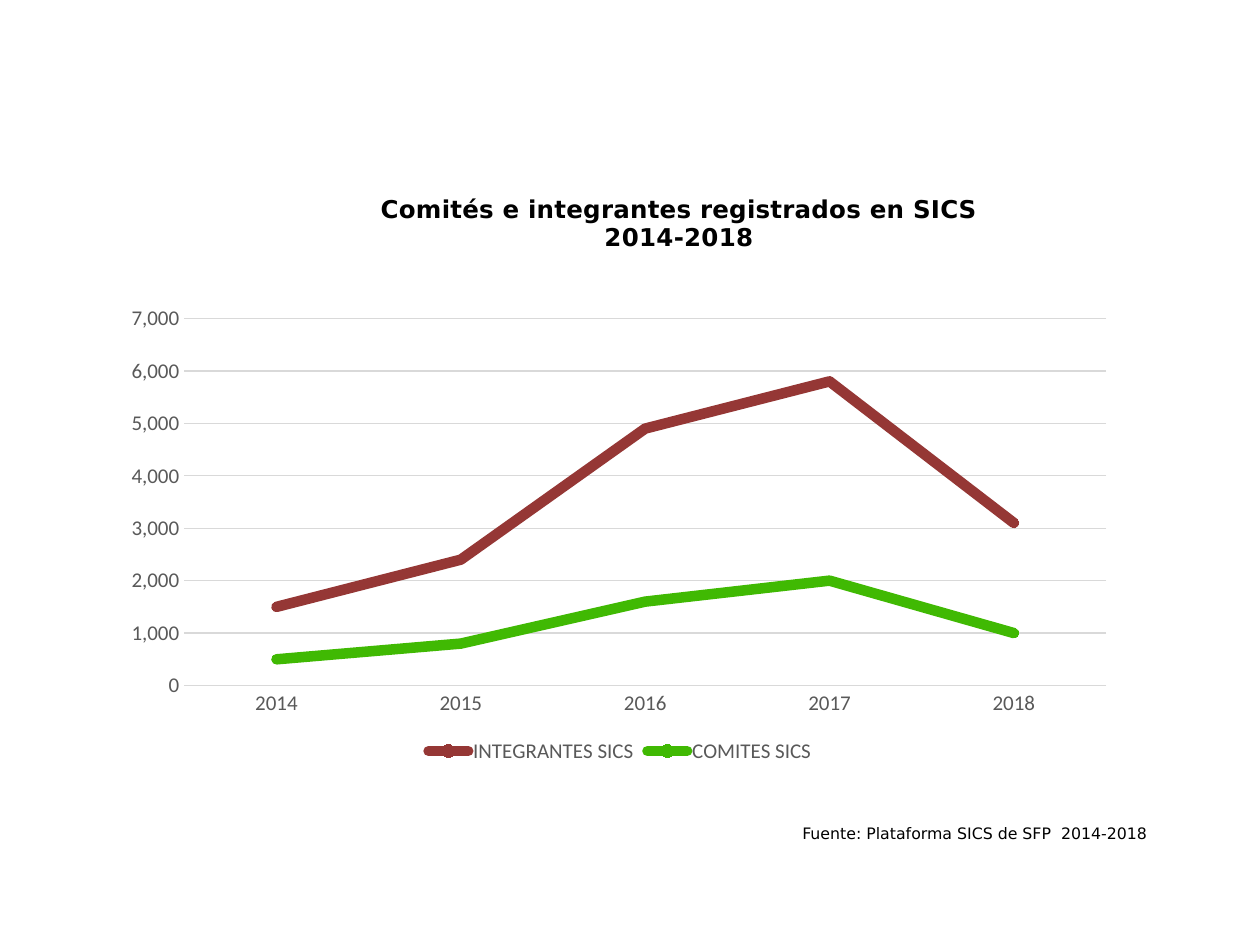
from dataclasses import dataclass

from lxml.etree import SubElement
from pptx import Presentation
from pptx.chart.data import CategoryChartData
from pptx.dml.color import RGBColor as RGB
from pptx.enum.chart import XL_CHART_TYPE as ChartType
from pptx.enum.chart import XL_LEGEND_POSITION as LegendPosition
from pptx.enum.chart import XL_MARKER_STYLE as MarkerStyle
from pptx.enum.chart import XL_TICK_MARK as TickMark
from pptx.enum.text import MSO_AUTO_SIZE as AutoSize
from pptx.enum.text import PP_ALIGN as Align
from pptx.oxml.ns import qn
from pptx.util import Pt


@dataclass(frozen=True)
class Theme:
    text: RGB = RGB(0x00, 0x00, 0x00)
    label: RGB = RGB(0x59, 0x59, 0x59)
    grid: RGB = RGB(0xD9, 0xD9, 0xD9)
    members: RGB = RGB(0x95, 0x37, 0x35)
    committees: RGB = RGB(0x40, 0xB9, 0x03)
    chart_font: str = "Calibri"
    text_font: str = "DejaVu Sans"
    title_size: int = 14
    label_size: int = 12
    source_size: int = 9


THEME = Theme()
YEARS = ["2014", "2015", "2016", "2017", "2018"]
REGISTERED = [
    ("INTEGRANTES SICS", [1500, 2400, 4900, 5800, 3100], THEME.members),
    ("COMITES SICS", [500, 800, 1600, 2000, 1000], THEME.committees),
]
TITLE_LINES = ["Comités e integrantes registrados en SICS", "2014-2018"]
SOURCE = "Fuente: Plataforma SICS de SFP  2014-2018"


def style_font(font, face, size, color, bold=False):
    font.name = face
    font.size = Pt(size)
    font.bold = bold
    font.color.rgb = color


def style_label(font):
    style_font(font, THEME.chart_font, THEME.label_size, THEME.label)


def style_rule(line):
    line.color.rgb = THEME.grid
    line.width = Pt(0.75)


def place(element, **settings):
    layout = element.find(qn("c:layout"))
    if layout is None:
        layout = element.makeelement(qn("c:layout"))
        text = element.find(qn("c:tx"))
        element.insert(0 if text is None else 1, layout)
    manual = SubElement(layout, qn("c:manualLayout"))
    for tag, value in settings.items():
        SubElement(manual, qn(f"c:{tag}")).set("val", str(value))


def add_title(chart):
    chart.has_title = True
    title = chart.chart_title
    title.include_in_layout = False
    frame = title.text_frame
    for index, line in enumerate(TITLE_LINES):
        paragraph = frame.add_paragraph() if index else frame.paragraphs[0]
        paragraph.alignment = Align.CENTER
        run = paragraph.add_run()
        run.text = line
        style_font(run.font, THEME.text_font, THEME.title_size, THEME.text, True)
    place(title._element, xMode="edge", yMode="edge", x=0.26, y=0.02)


def style_axes(chart):
    years, counts = chart.category_axis, chart.value_axis
    for axis in (years, counts):
        axis.major_tick_mark = axis.minor_tick_mark = TickMark.NONE
        style_label(axis.tick_labels.font)
    style_rule(years.format.line)
    counts.format.line.fill.background()
    counts.minimum_scale, counts.maximum_scale = 0, 7000
    counts.major_unit = 1000
    counts.tick_labels.number_format = "#,##0"
    counts.tick_labels.number_format_is_linked = False
    style_rule(counts.major_gridlines.format.line)


def style_series(series, color):
    series.smooth = False
    series.format.line.color.rgb = color
    series.format.line.width = Pt(6)
    SubElement(series.format.line._get_or_add_ln(), qn("a:round"))
    series._element.spPr.find(qn("a:ln")).set("cap", "rnd")
    marker = series.marker
    marker.style = MarkerStyle.CIRCLE
    marker.size = 5
    marker.format.fill.solid()
    marker.format.fill.fore_color.rgb = color
    marker.format.line.color.rgb = color


def add_line_chart(slide):
    registrations = CategoryChartData(number_format="#,##0")
    registrations.categories = YEARS
    for name, counts, _ in REGISTERED:
        registrations.add_series(name, counts)
    chart = slide.shapes.add_chart(
        ChartType.LINE_MARKERS, Pt(64.8), Pt(100.8), Pt(578.9), Pt(338.4), registrations
    ).chart
    style_font(chart.font, THEME.chart_font, 10, THEME.text)
    add_title(chart)
    style_axes(chart)
    plot = chart.plots[0]
    plot.vary_by_categories = False
    for series, (_, _, color) in zip(plot.series, REGISTERED):
        style_series(series, color)
    chart.has_legend = True
    chart.legend.position = LegendPosition.BOTTOM
    chart.legend.include_in_layout = False
    style_label(chart.legend.font)
    place(
        chart._chartSpace.chart.plotArea,
        layoutTarget="inner", xMode="edge", yMode="edge",
        x=0.07, y=0.24, w=0.91, h=0.62,
    )


def add_source(slide):
    frame = slide.shapes.add_textbox(Pt(52.6), Pt(467.3), Pt(609.8), Pt(18)).text_frame
    frame.word_wrap = True
    frame.auto_size = AutoSize.SHAPE_TO_FIT_TEXT
    paragraph = frame.paragraphs[0]
    paragraph.alignment = Align.RIGHT
    run = paragraph.add_run()
    run.text = SOURCE
    style_font(run.font, THEME.text_font, THEME.source_size, THEME.text)


def main():
    deck = Presentation()
    deck.slide_width, deck.slide_height = Pt(720), Pt(540)
    slide = deck.slides.add_slide(deck.slide_layouts[6])
    add_line_chart(slide)
    add_source(slide)
    deck.save("out.pptx")


if __name__ == "__main__":
    main()
